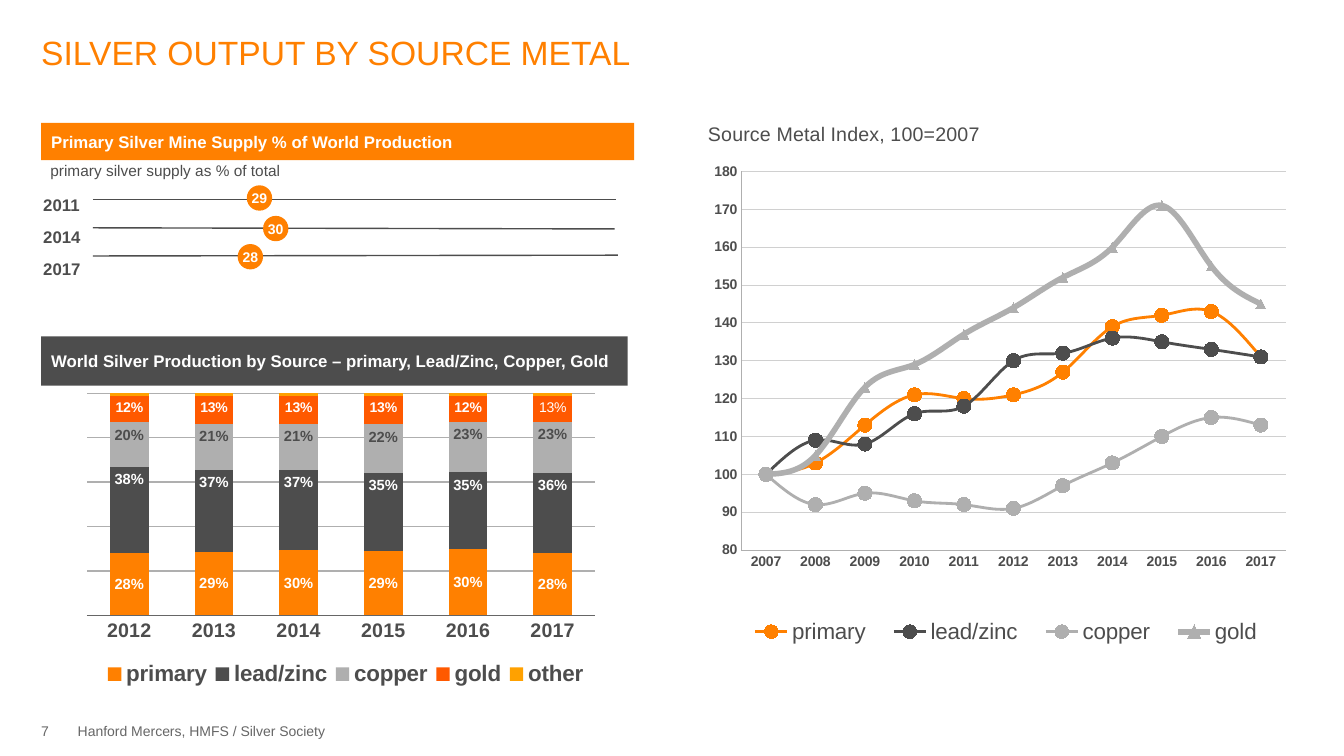
from pptx import Presentation
from pptx.chart.data import CategoryChartData
from pptx.dml.color import RGBColor
from pptx.enum.chart import XL_CHART_TYPE, XL_LABEL_POSITION, XL_LEGEND_POSITION
from pptx.enum.chart import XL_MARKER_STYLE, XL_TICK_MARK
from pptx.enum.shapes import MSO_CONNECTOR, MSO_SHAPE
from pptx.enum.text import MSO_ANCHOR, PP_ALIGN
from pptx.oxml import parse_xml
from pptx.oxml.ns import nsdecls
from pptx.util import Cm, Pt

FONT = "Arial"
HUES = {
    "orange": "FF8000", "dark": "4D4D4D", "silver": "AFAFAF", "red": "FF5900",
    "amber": "FFA100", "gray": "666666", "pale": "D0D0D0", "white": "FFFFFF",
}
TEXTS = [
    (["SILVER OUTPUT BY SOURCE METAL"], (1.04, 0.81, 31.8, 1.19), 24, "orange", False, 1),
    (["primary silver supply as % of total"], (1.27, 4.06, 7.34, 0.43), 11, "dark", False, 1),
    (["2011", "2014", "2017"], (1.09, 4.6, 1.07, 2.46), 12, "dark", True, 1.6),
    (["7"], (1.04, 18.21, 0.9, 0.84), 10, "gray", False, 1),
    (["Hanford Mercers, HMFS / Silver Society"], (1.96, 18.21, 14.78, 0.84), 10, "gray", False, 1),
]
BARS = [
    ("Primary Silver Mine Supply % of World Production", (1.04, 3.1, 14.94, 0.94), "orange"),
    ("World Silver Production by Source – primary, Lead/Zinc, Copper, Gold",
     (1.04, 8.48, 14.78, 1.24), "dark"),
]
TRACKS = [
    ("29", 6.22, 4.67, (2.34, 5.03), (15.52, 5.03)),
    ("30", 6.63, 5.44, (2.34, 5.74), (15.49, 5.77)),
    ("28", 5.99, 6.15, (2.34, 6.45), (15.57, 6.43)),
]
SHARES = [
    ("primary", [0.28, 0.29, 0.3, 0.29, 0.3, 0.28], "orange", ("CENTER", 10.5, "white")),
    ("lead/zinc", [0.38, 0.37, 0.37, 0.35, 0.35, 0.36], "dark", ("INSIDE_END", 10.5, "white")),
    ("copper", [0.2, 0.21, 0.21, 0.22, 0.23, 0.23], "silver", ("INSIDE_END", 10.5, "dark")),
    ("gold", [0.12, 0.13, 0.13, 0.13, 0.12, 0.12], "red", ("INSIDE_END", 10, "white")),
    ("other", [0.01] * 6, "amber", None),
]
INDEX = [
    ("primary", [100, 103, 113, 121, 120, 121, 127, 139, 142, 143, 131], "orange", 2, "CIRCLE", 10),
    ("lead/zinc", [100, 109, 108, 116, 118, 130, 132, 136, 135, 133, 131], "dark", 2, "CIRCLE", 10),
    ("copper", [100, 92, 95, 93, 92, 91, 97, 103, 110, 115, 113], "silver", 2, "CIRCLE", 10),
    ("gold", [100, 105, 123, 129, 137, 144, 152, 160, 171, 155, 145], "silver", 4, "TRIANGLE", 7),
]

deck = Presentation()
deck.slide_width, deck.slide_height = Cm(33.87), Cm(19.05)
slide = deck.slides.add_slide(deck.slide_layouts[6])
shapes = slide.shapes


def hue(name):
    return RGBColor.from_string(HUES[name])


def style(font, size, tint, bold=False):
    font.name, font.size, font.bold = FONT, Pt(size), bold
    font.color.rgb = hue(tint)


def paint(fill, tint):
    fill.solid()
    fill.fore_color.rgb = hue(tint)


def ink(line, tint, width):
    paint(line.fill, tint)
    line.width = Pt(width)


def write(frame, lines, size, tint, bold, gap=1, align=PP_ALIGN.LEFT, pad=0):
    frame.word_wrap = True
    frame.margin_left = frame.margin_right = Cm(pad)
    frame.margin_top = frame.margin_bottom = 0
    for i, line in enumerate(lines):
        para = frame.add_paragraph() if i else frame.paragraphs[0]
        para.alignment, para.line_spacing = align, gap
        run = para.add_run()
        run.text = line
        style(run.font, size, tint, bold)


def block(kind, box, tint, text, size, align, pad):
    shape = shapes.add_shape(kind, *map(Cm, box))
    shape.shadow.inherit = False
    paint(shape.fill, tint)
    shape.line.fill.background()
    write(shape.text_frame, [text], size, "white", True, 1, align, pad)
    shape.text_frame.vertical_anchor = MSO_ANCHOR.MIDDLE


def place(node, spot, at, inner=False):
    for old in node.xpath("./c:layout"):
        node.remove(old)
    area = '<c:layoutTarget val="inner"/>' if inner else ""
    modes = "".join(f'<c:{k}Mode val="edge"/>' for k in "xy")
    sizes = "".join(f'<c:{k} val="{v}"/>' for k, v in zip("xywh", at))
    node.insert(spot, parse_xml(
        f'<c:layout {nsdecls("c")}><c:manualLayout>{area}{modes}{sizes}'
        "</c:manualLayout></c:layout>"))


def graph(kind, box, years, rows, plot, key, bold, form):
    data = CategoryChartData(number_format=form)
    data.categories = [str(year) for year in years]
    for row in rows:
        data.add_series(row[0], row[1])
    chart = shapes.add_chart(kind, *map(Cm, box), data).chart
    style(chart.font, 10, "dark", bold)
    chart.has_title = False
    chart.has_legend = True
    chart.legend.position = XL_LEGEND_POSITION.BOTTOM
    chart.legend.include_in_layout = False
    style(chart.legend.font, 16, "dark", bold)
    place(chart.legend._element, 1, key)
    place(chart._chartSpace.xpath(".//c:plotArea")[0], 0, plot, True)
    chart.plots[0].vary_by_categories = False
    for axis in (chart.category_axis, chart.value_axis):
        axis.major_tick_mark = axis.minor_tick_mark = XL_TICK_MARK.NONE
    chart.value_axis.has_major_gridlines = True
    return chart


for lines, box, size, tint, bold, gap in TEXTS:
    write(shapes.add_textbox(*map(Cm, box)).text_frame, lines, size, tint, bold, gap)

for text, box, tint in BARS:
    block(MSO_SHAPE.RECTANGLE, box, tint, text, 12, PP_ALIGN.LEFT, 0.25)

for value, left, top, start, end in TRACKS:
    line = shapes.add_connector(MSO_CONNECTOR.STRAIGHT, *map(Cm, start + end))
    ink(line.line, "dark", 1)
    line._element.spPr.append(parse_xml(f'<a:effectLst {nsdecls("a")}/>'))
    block(MSO_SHAPE.OVAL, (left, top, 0.64, 0.64), "orange", value, 10, PP_ALIGN.CENTER, 0)

stack = graph(XL_CHART_TYPE.COLUMN_STACKED_100, (0.64, 9.6, 15.52, 8.03), range(2012, 2018),
              SHARES, (0.1, 0.039, 0.825, 0.697), (0.12, 0.86, 0.8, 0.12), True, "0%")
stack.plots[0].gap_width, stack.plots[0].overlap = 120, 100
style(stack.category_axis.tick_labels.font, 14, "dark", True)
ink(stack.category_axis.format.line, "gray", 1)
scale = stack.value_axis
scale.visible = False
scale.minimum_scale, scale.maximum_scale, scale.major_unit = 0, 1, 0.2
ink(scale.major_gridlines.format.line, "silver", 1)
for series, (name, vals, tint, label) in zip(stack.plots[0].series, SHARES):
    paint(series.format.fill, tint)
    if label:
        spot, size, shade = label
        tags = series.data_labels
        tags.show_value = True
        tags.number_format, tags.number_format_is_linked = "0%", False
        tags.position = XL_LABEL_POSITION[spot]
        style(tags.font, size, shade, True)
last = stack.plots[0].series[3].points[5].data_label
run = last.text_frame.paragraphs[0].add_run()
run.text = "13%"
style(run.font, 10, "white")
last.position = XL_LABEL_POSITION.INSIDE_END

trend = graph(XL_CHART_TYPE.LINE_MARKERS, (17.6, 2.67, 15.21, 14.48), range(2007, 2018),
              INDEX, (0.071, 0.114, 0.902, 0.659), (0.06, 0.88, 0.9, 0.07), False, "General")
head = trend.chart_title
run = head.text_frame.paragraphs[0].add_run()
run.text = "Source Metal Index, 100=2007"
style(run.font, 14, "dark")
place(head._element, 1, (0.01, 0.02))
scale = trend.value_axis
scale.minimum_scale, scale.maximum_scale, scale.major_unit = 80, 180, 10
ink(scale.major_gridlines.format.line, "pale", 0.75)
for axis in (trend.category_axis, scale):
    style(axis.tick_labels.font, 10, "dark", True)
    ink(axis.format.line, "silver", 0.75)
for series, (name, vals, tint, width, mark, size) in zip(trend.plots[0].series, INDEX):
    series.smooth = True
    ink(series.format.line, tint, width)
    series.marker.style, series.marker.size = XL_MARKER_STYLE[mark], size
    paint(series.marker.format.fill, tint)
    ink(series.marker.format.line, tint, 0.75)

deck.save("out.pptx")
